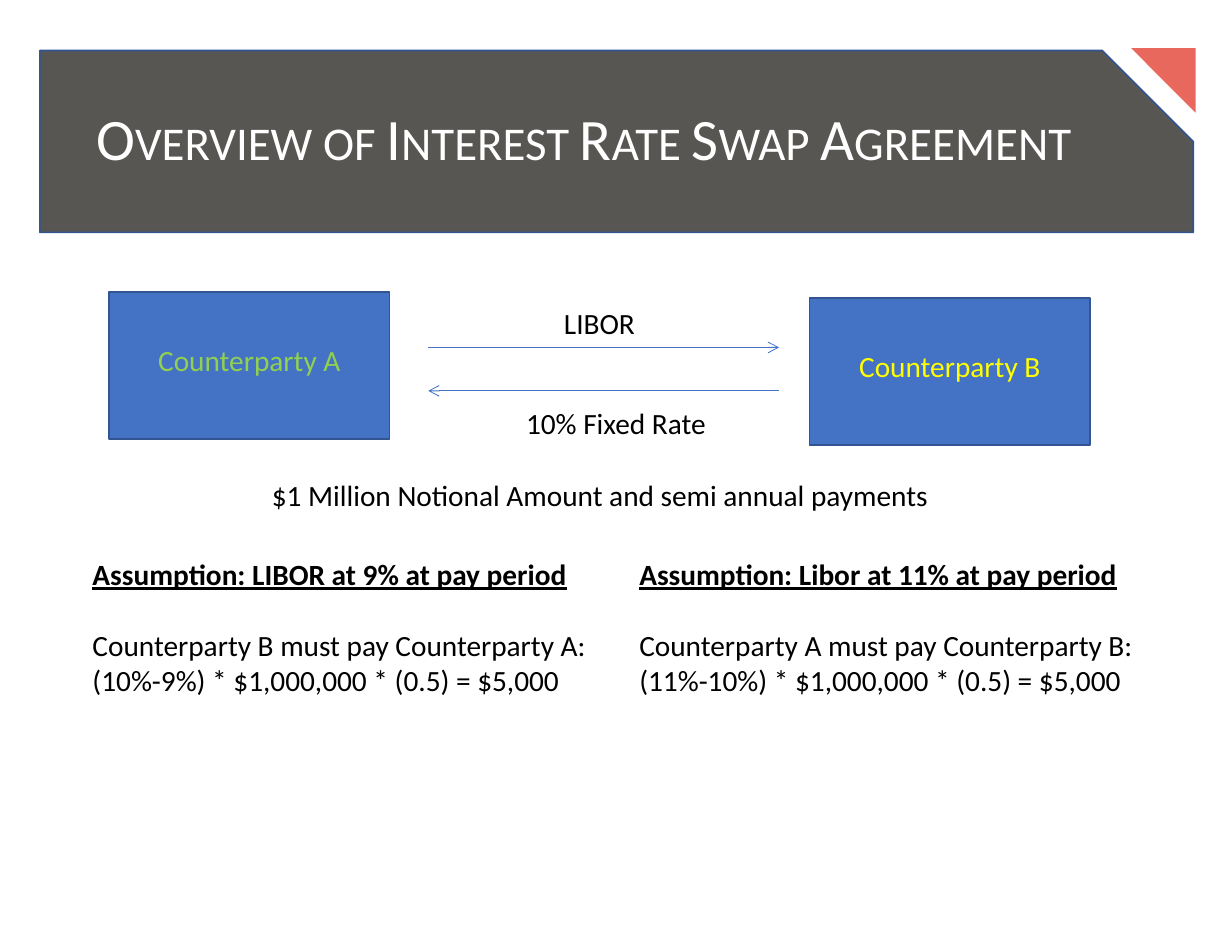
from lxml import etree
from pptx import Presentation
from pptx import util as u
from pptx.dml.color import RGBColor
from pptx.enum import shapes, text
from pptx.oxml import ns

WHITE = RGBColor(0xFF, 0xFF, 0xFF)
BLACK = RGBColor(0, 0, 0)
CHARCOAL = RGBColor(0x57, 0x56, 0x52)
CORAL = RGBColor(0xE9, 0x68, 0x5D)
BLUE = RGBColor(0x44, 0x72, 0xC4)
NAVY = RGBColor(0x32, 0x54, 0x91)
GREEN = RGBColor(0x92, 0xD0, 0x50)
YELLOW = RGBColor(0xFF, 0xFF, 0x00)

LEFT = text.PP_ALIGN.LEFT
CENTER = text.PP_ALIGN.CENTER


class SwapSlide:
    body = {"name": "Calibri", "size": u.Pt(18), "bold": False, "underline": False}
    heading = {"bold": True, "underline": True}
    paragraph_gap = u.Pt(22)

    def __init__(self, deck):
        self.slide = deck.slides.add_slide(deck.slide_layouts[5])

    def format_font(self, font, color, **changes):
        for key, value in {**self.body, **changes}.items():
            setattr(font, key, value)
        font.color.rgb = color

    def block(self, kind, box, fill, outline=None, rotation=0):
        block = self.slide.shapes.add_shape(kind, *map(u.Inches, box))
        block.shadow.inherit = False
        block.rotation = rotation
        block.fill.solid()
        block.fill.fore_color.rgb = fill
        if outline is None:
            block.line.fill.background()
        else:
            block.line.color.rgb = outline
            block.line.width = u.Pt(1)
        return block

    def title(self, wording, box):
        title = self.slide.shapes.title
        title.left, title.top, title.width, title.height = map(u.Inches, box)
        frame = title.text_frame
        frame.text = wording
        frame.auto_size = text.MSO_AUTO_SIZE.NONE
        frame.vertical_anchor = text.MSO_ANCHOR.MIDDLE
        line = frame.paragraphs[0]
        line.alignment = LEFT
        line.line_spacing = 0.9
        run = line.runs[0]
        self.format_font(run.font, WHITE, size=u.Pt(36))
        run.font._element.set("cap", "small")
        self.slide.shapes._spTree.append(title._element)

    def label(self, lines, box, color=BLACK, align=CENTER, headed=False):
        frame = self.slide.shapes.add_textbox(*map(u.Inches, box)).text_frame
        frame.word_wrap = True
        frame.auto_size = text.MSO_AUTO_SIZE.SHAPE_TO_FIT_TEXT
        frame.text = "\n".join(lines)
        for number, line in enumerate(frame.paragraphs):
            line.alignment = align
            changes = self.heading if headed and number == 0 else {}
            self.format_font(line.runs[0].font, color, **changes)
        if headed:
            frame.paragraphs[1].space_before = self.paragraph_gap

    def arrow(self, start, end, y):
        arrow = self.slide.shapes.add_connector(
            shapes.MSO_CONNECTOR.STRAIGHT, *map(u.Inches, (start, y, end, y)))
        arrow.line.color.rgb = BLUE
        arrow.line.width = u.Pt(0.5)
        etree.SubElement(arrow.line._get_or_add_ln(), ns.qn("a:tailEnd"), type="arrow")
        etree.SubElement(arrow._element.spPr, ns.qn("a:effectLst"))


def main():
    deck = Presentation()
    deck.slide_width, deck.slide_height = u.Inches(10.5), u.Inches(8)
    swap = SwapSlide(deck)

    banner = swap.block(shapes.MSO_SHAPE.SNIP_1_RECTANGLE,
                        (0.34, 0.43, 9.83, 1.55), CHARCOAL, NAVY)
    banner.adjustments[0] = 0.5
    swap.block(shapes.MSO_SHAPE.RIGHT_TRIANGLE, (9.64, 0.41, 0.55, 0.55), CORAL, rotation=180)
    swap.title("Overview of Interest Rate Swap Agreement", (0.72, 0.43, 9.06, 1.55))

    for party, left, top, color in (("A", 0.93, 2.49, GREEN), ("B", 6.9, 2.54, YELLOW)):
        swap.block(shapes.MSO_SHAPE.RECTANGLE, (left, top, 2.39, 1.25), BLUE, NAVY)
        swap.label([f"Counterparty {party}"], (left, top + 0.38, 2.39, 0.4), color)

    swap.arrow(3.65, 6.64, 2.96)
    swap.label(["LIBOR"], (3.68, 2.55, 2.86, 0.4))
    swap.arrow(6.64, 3.65, 3.33)
    swap.label(["10% Fixed Rate"], (3.85, 3.4, 2.8, 0.4))
    swap.label(["$1 Million Notional Amount and semi annual payments"], (0.93, 4.02, 8.37, 0.4))

    scenarios = (
        (0.69, 4.66, "LIBOR at 9%", "B", "A", "10%-9%"),
        (5.35, 4.49, "Libor at 11%", "A", "B", "11%-10%"),
    )
    for left, width, rate, payer, receiver, spread in scenarios:
        swap.label([f"Assumption: {rate} at pay period",
                    f"Counterparty {payer} must pay Counterparty {receiver}:",
                    f"({spread}) * $1,000,000 * (0.5) = $5,000"],
                   (left, 4.69, width, 1.31), align=LEFT, headed=True)

    deck.save("out.pptx")


if __name__ == "__main__":
    main()
